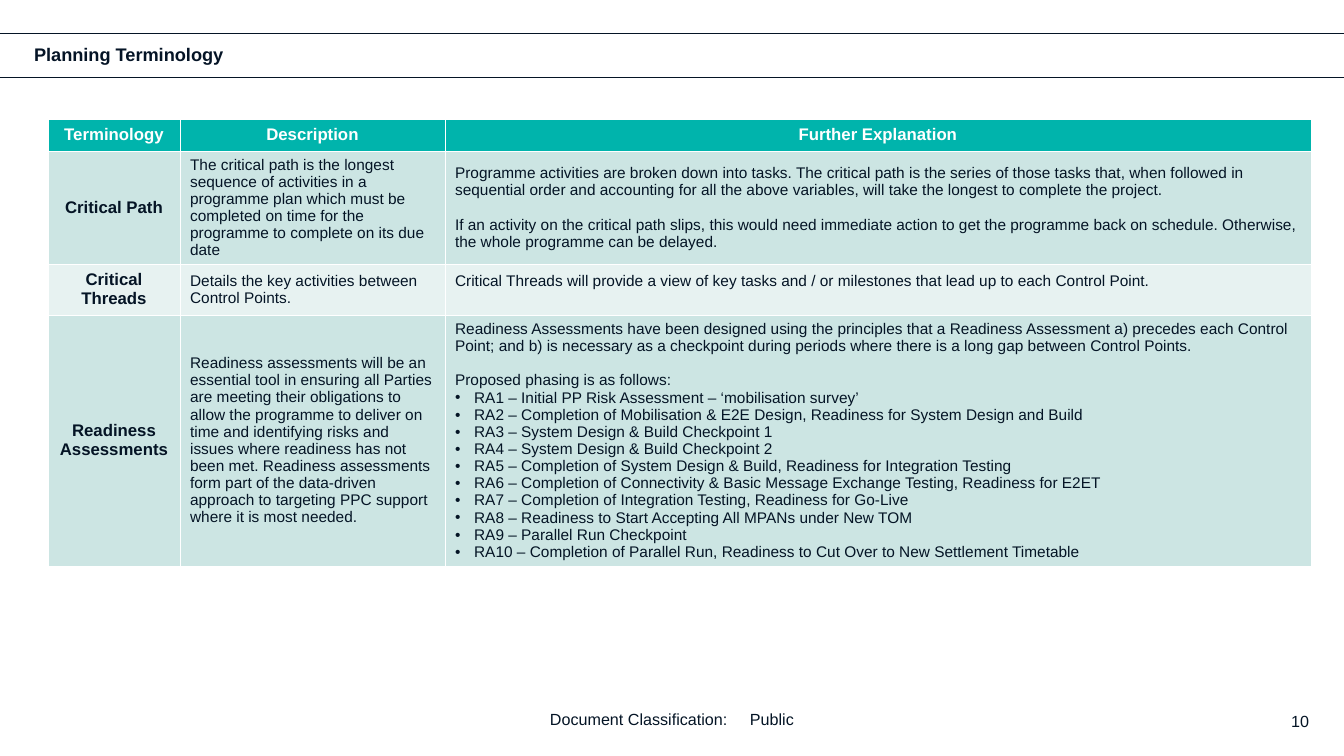
from dataclasses import dataclass

from lxml.etree import SubElement
from pptx import Presentation
from pptx.dml.color import RGBColor
from pptx.enum.shapes import MSO_CONNECTOR
from pptx.enum.text import MSO_ANCHOR as Anchor, MSO_AUTO_SIZE as AutoSize, PP_ALIGN as Align
from pptx.oxml.ns import qn
from pptx.slide import Slide
from pptx.table import _Cell as Cell
from pptx.text.text import TextFrame, _Paragraph as Paragraph
from pptx.util import Emu, Pt

SLIDE_WIDTH, SLIDE_HEIGHT = 1344, 756
EMU_PER_PX = 12192000 / SLIDE_WIDTH
FONT = "Arial"
INK, WHITE, TEAL = "041425", "FFFFFF", "00B4AC"
BAND_FILLS = ("CCE5E3", "E7F2F1")
BODY_SIZE, HEADING_SIZE, FOOTER_SIZE = 11, 12, 11.5
BLANK_LINE = 12.3
BULLET_INDENT = 19
RULE_TOPS = (33, 77)
COLUMN_WIDTHS = (132, 265, 866)
HEADINGS = ("Terminology", "Description", "Further Explanation")
HEADING_HEIGHT = 32


@dataclass(frozen=True)
class Line:
    text: str
    bullet: bool = False
    space_before: float = 0


@dataclass(frozen=True)
class Term:
    name: str
    description: str
    explanation: tuple[Line, ...]
    height: int
    bottom_margin: int = 5


PHASES = (
    "Initial PP Risk Assessment – ‘mobilisation survey’",
    "Completion of Mobilisation & E2E Design, Readiness for System Design and Build",
    "System Design & Build Checkpoint 1",
    "System Design & Build Checkpoint 2",
    "Completion of System Design & Build, Readiness for Integration Testing",
    "Completion of Connectivity & Basic Message Exchange Testing, Readiness for E2ET",
    "Completion of Integration Testing, Readiness for Go-Live",
    "Readiness to Start Accepting All MPANs under New TOM",
    "Parallel Run Checkpoint",
    "Completion of Parallel Run, Readiness to Cut Over to New Settlement Timetable",
)

TERMS = (
    Term(
        "Critical Path",
        "The critical path is the longest sequence of activities in a programme plan which "
        "must be completed on time for the programme to complete on its due date",
        (
            Line("Programme activities are broken down into tasks. The critical path is the "
                 "series of those tasks that, when followed in sequential order and accounting "
                 "for all the above variables, will take the longest to complete the project."),
            Line("If an activity on the critical path slips, this would need immediate action "
                 "to get the programme back on schedule. Otherwise, the whole programme can be "
                 "delayed.", space_before=BLANK_LINE),
        ),
        113,
    ),
    Term(
        "Critical Threads",
        "Details the key activities between Control Points.",
        (Line("Critical Threads will provide a view of key tasks and / or milestones that lead "
              "up to each Control Point."),),
        51,
        bottom_margin=22,
    ),
    Term(
        "Readiness Assessments",
        "Readiness assessments will be an essential tool in ensuring all Parties are meeting "
        "their obligations to allow the programme to deliver on time and identifying risks "
        "and issues where readiness has not been met. Readiness assessments form part of the "
        "data-driven approach to targeting PPC support where it is most needed.",
        (
            Line("Readiness Assessments have been designed using the principles that a "
                 "Readiness Assessment a) precedes each Control Point; and b) is necessary as "
                 "a checkpoint during periods where there is a long gap between Control Points."),
            Line("Proposed phasing is as follows:", space_before=BLANK_LINE),
            *(Line(f"RA{number} – {phase}", bullet=True)
              for number, phase in enumerate(PHASES, start=1)),
        ),
        251,
    ),
)


def px(length: int) -> Emu:
    return Emu(round(length * EMU_PER_PX))


def colour(value: str) -> RGBColor:
    return RGBColor.from_string(value)


def format_runs(paragraph: Paragraph, size: float, ink: str = INK, bold: bool = False) -> None:
    for run in paragraph.runs:
        run.font.name = FONT
        run.font.size = Pt(size)
        run.font.bold = bold
        run.font.color.rgb = colour(ink)


def clear_margins(frame: TextFrame) -> None:
    frame.margin_left = frame.margin_right = frame.margin_top = frame.margin_bottom = 0


def add_bullet(paragraph: Paragraph) -> None:
    properties = paragraph._p.get_or_add_pPr()
    properties.set("marL", str(px(BULLET_INDENT)))
    properties.set("indent", str(-px(BULLET_INDENT)))
    SubElement(properties, qn("a:buFont"), typeface=FONT)
    SubElement(properties, qn("a:buChar"), char="•")


def style_cell(cell: Cell, fill: str) -> None:
    """Give the cell thin white borders, a plain fill and middle anchoring."""
    properties = cell._tc.get_or_add_tcPr()
    for side in ("lnL", "lnR", "lnT", "lnB"):
        border = SubElement(properties, qn(f"a:{side}"), w=str(Pt(0.5)))
        SubElement(SubElement(border, qn("a:solidFill")), qn("a:srgbClr"), val=WHITE)
    cell.fill.solid()
    cell.fill.fore_color.rgb = colour(fill)
    cell.vertical_anchor = Anchor.MIDDLE


def write_heading(cell: Cell, text: str, ink: str) -> None:
    paragraph = cell.text_frame.paragraphs[0]
    paragraph.text = text
    paragraph.alignment = Align.CENTER
    format_runs(paragraph, HEADING_SIZE, ink, bold=True)


def write_lines(cell: Cell, lines: tuple[Line, ...]) -> None:
    frame = cell.text_frame
    frame.text = "\n".join(line.text for line in lines)
    for paragraph, line in zip(frame.paragraphs, lines):
        if line.bullet:
            add_bullet(paragraph)
        if line.space_before:
            paragraph.space_before = Pt(line.space_before)
        format_runs(paragraph, BODY_SIZE)


def add_title(slide: Slide) -> None:
    title = slide.shapes.title
    title.left, title.top, title.width, title.height = px(34), px(44), px(399), px(23)
    frame = title.text_frame
    frame.text = "Planning Terminology"
    frame.auto_size = AutoSize.NONE
    frame.vertical_anchor = Anchor.MIDDLE
    clear_margins(frame)
    paragraph = frame.paragraphs[0]
    paragraph.alignment = Align.LEFT
    paragraph.line_spacing = 0.9
    format_runs(paragraph, 13, "051426", bold=True)


def add_rule(slide: Slide, top: int) -> None:
    rule = slide.shapes.add_connector(
        MSO_CONNECTOR.STRAIGHT, 0, px(top), px(SLIDE_WIDTH), px(top))
    rule.line.color.rgb = colour(INK)
    rule.line.width = Pt(0.5)
    SubElement(rule._element.spPr, qn("a:effectLst"))


def add_terms_table(slide: Slide) -> None:
    heights = (HEADING_HEIGHT, *(term.height for term in TERMS))
    table = slide.shapes.add_table(
        len(heights), len(COLUMN_WIDTHS), px(48), px(119),
        px(sum(COLUMN_WIDTHS)), px(sum(heights))).table
    table.horz_banding = False
    for column, width in zip(table.columns, COLUMN_WIDTHS):
        column.width = px(width)
    for row, height in zip(table.rows, heights):
        row.height = px(height)
    for index, heading in enumerate(HEADINGS):
        style_cell(table.cell(0, index), TEAL)
        write_heading(table.cell(0, index), heading, WHITE)
    for index, term in enumerate(TERMS):
        name, description, explanation = table.rows[index + 1].cells
        for cell in (name, description, explanation):
            style_cell(cell, BAND_FILLS[index % len(BAND_FILLS)])
        write_heading(name, term.name, INK)
        write_lines(description, (Line(term.description),))
        write_lines(explanation, term.explanation)
        explanation.margin_bottom = px(term.bottom_margin)


def add_footer_text(slide: Slide, text: str, left: int, top: int, width: int,
                    alignment: Align, tab_stop: int = 0) -> None:
    frame = slide.shapes.add_textbox(px(left), px(top), px(width), px(40)).text_frame
    frame.word_wrap = True
    frame.vertical_anchor = Anchor.MIDDLE
    clear_margins(frame)
    paragraph = frame.paragraphs[0]
    paragraph.text = text
    paragraph.alignment = alignment
    if tab_stop:
        tabs = SubElement(paragraph._p.get_or_add_pPr(), qn("a:tabLst"))
        SubElement(tabs, qn("a:tab"), pos=str(px(tab_stop)), algn="l")
    format_runs(paragraph, FOOTER_SIZE)


def main() -> None:
    presentation = Presentation()
    presentation.slide_width, presentation.slide_height = px(SLIDE_WIDTH), px(SLIDE_HEIGHT)
    slide = presentation.slides.add_slide(presentation.slide_layouts[5])
    for top in RULE_TOPS:
        add_rule(slide, top)
    add_title(slide)
    add_terms_table(slide)
    add_footer_text(slide, "10", 1007, 701, 302, Align.RIGHT)
    add_footer_text(slide, "Document Classification:\tPublic", 550, 699, 244, Align.LEFT, 200)
    presentation.save("out.pptx")


if __name__ == "__main__":
    main()
